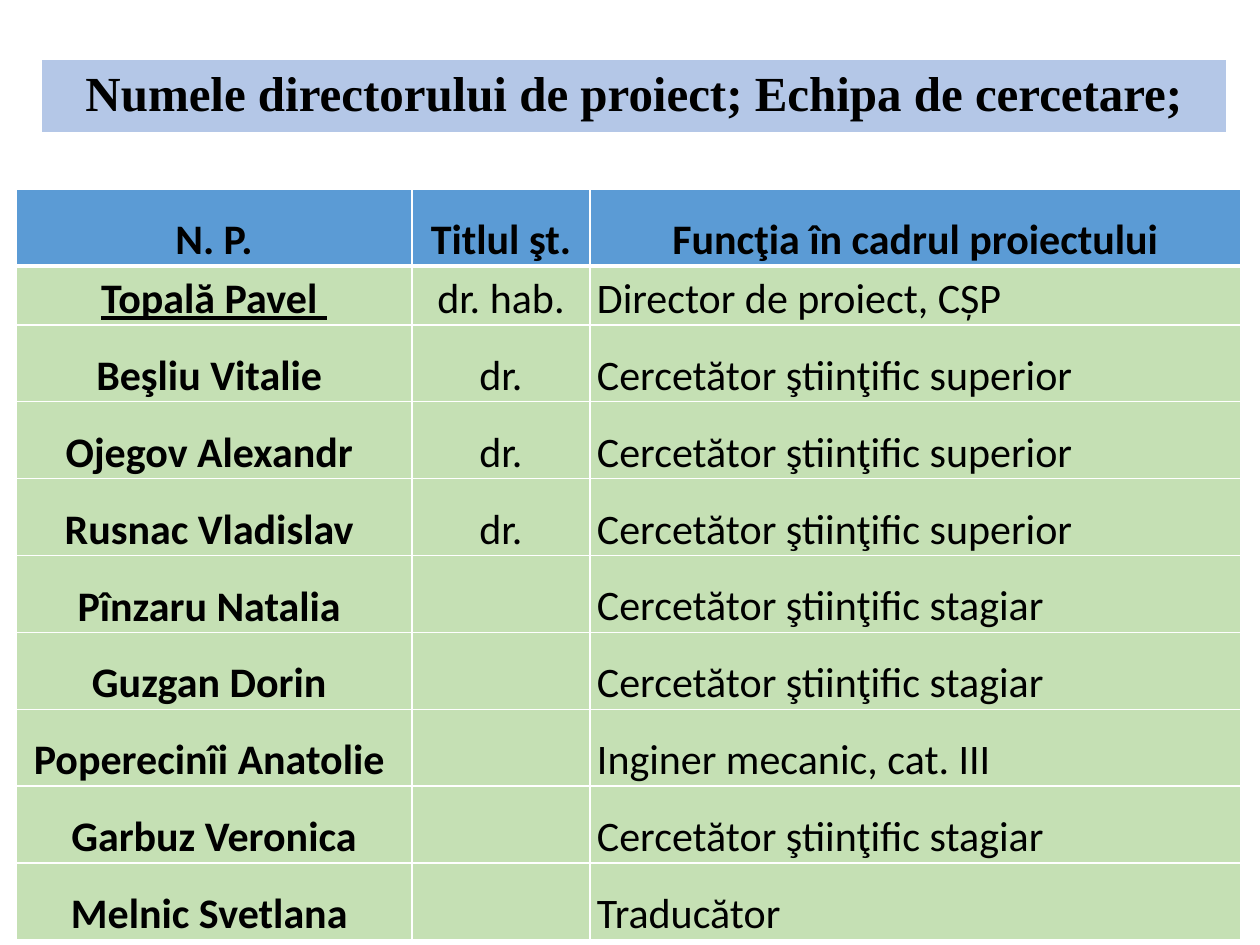
from lxml.etree import SubElement
from pptx import Presentation
from pptx.dml.color import RGBColor
from pptx.enum.text import MSO_ANCHOR as Anchor, PP_ALIGN as Align
from pptx.oxml.ns import qn
from pptx.util import Pt

EMU_PER_PX = 914400 / 126
COLORS = {"banner": "B4C7E7", "header": "5B9BD5", "body": "C5E0B4",
          "grid": "FFFFFF", "text": "000000"}
COLUMN_WIDTHS = (396, 178, 651)
HEADINGS = ("N. P.", "Titlul şt.", "Funcţia în cadrul proiectului")
SENIOR = "Cercetător ştiinţific superior"
TRAINEE = "Cercetător ştiinţific stagiar"
TEAM = (
    ("Topală Pavel ", "dr. hab.", "Director de proiect, CȘP"),
    ("Beşliu Vitalie ", "dr.", SENIOR),
    ("Ojegov Alexandr ", "dr.", SENIOR),
    ("Rusnac Vladislav ", "dr.", SENIOR),
    ("Pînzaru Natalia ", "", TRAINEE),
    ("Guzgan Dorin ", "", TRAINEE),
    ("Poperecinîi Anatolie ", "", "Inginer mecanic, cat. III"),
    ("Garbuz Veronica", "", TRAINEE),
    ("Melnic Svetlana ", "", "Traducător"),
)


def px(length):
    """Turn whole pixels into EMU."""
    return round(length * EMU_PER_PX)


def paint(target, color):
    """Give a shape or cell a solid fill."""
    target.fill.solid()
    target.fill.fore_color.rgb = RGBColor.from_string(COLORS[color])


def write(frame, words, size, face, align, spacing, bold=False, underline=False):
    """Write one formatted run into the first paragraph of a frame."""
    line = frame.paragraphs[0]
    line.alignment = align
    line.line_spacing = spacing
    run = line.add_run()
    run.text = words
    font = run.font
    font.name, font.size, font.bold = face, Pt(size), bold
    font.underline = underline
    font.color.rgb = RGBColor.from_string(COLORS["text"])


def rule_cell(cell, top, bottom):
    """Draw the four grid lines of a cell, with widths in points."""
    props = cell._tc.get_or_add_tcPr()
    for side, width in (("L", 1), ("R", 1), ("T", top), ("B", bottom)):
        edge = SubElement(props, qn(f"a:ln{side}"), w=str(Pt(width)))
        fill = SubElement(edge, qn("a:solidFill"))
        SubElement(fill, qn("a:srgbClr"), val=COLORS["grid"])


def add_banner(slide, left, top, width, height):
    """Place the slide title on its coloured band."""
    banner = slide.shapes.title
    banner.left, banner.top = px(left), px(top)
    banner.width, banner.height = px(width), px(height)
    paint(banner, "banner")
    banner.text_frame.vertical_anchor = Anchor.MIDDLE
    write(banner.text_frame, "Numele directorului de proiect; Echipa de cercetare;",
          28, "Times New Roman", Align.CENTER, 0.9, bold=True)


def fill_cell(cell, words, row, column):
    """Style a team table cell by its row and column."""
    header, director = row == 0, row == 1
    last = row == len(TEAM)
    rule_cell(cell, 3 if director else 1, 3 if header else 1)
    paint(cell, "header" if header else "body")
    cell.margin_left = cell.margin_right = px(7)
    cell.margin_top = cell.margin_bottom = 0
    centred = header or column < 2
    cell.vertical_anchor = Anchor.MIDDLE if centred or last else Anchor.TOP
    if words:
        write(cell.text_frame, words, 24, "Calibri",
              Align.CENTER if centred else Align.LEFT,
              1.15 if director else 1.5,
              bold=header or column == 0,
              underline=director and column == 0)


def add_team_table(slide, left, top, width, height):
    """Place the research team table, with a shorter row for the director."""
    entries = (HEADINGS, *TEAM)
    table = slide.shapes.add_table(len(entries), len(HEADINGS), px(left), px(top),
                                   px(width), px(height)).table
    table.horz_banding = False
    for column, column_width in zip(table.columns, COLUMN_WIDTHS):
        column.width = px(column_width)
    director_height = 53
    row_height = (height - director_height) // len(TEAM)
    for row, entry in enumerate(entries):
        table.rows[row].height = px(director_height if row == 1 else row_height)
        for column, words in enumerate(entry):
            fill_cell(table.cell(row, column), words, row, column)


def main():
    """Build and save the project team slide."""
    deck = Presentation()
    deck.slide_width, deck.slide_height = px(1260), px(945)
    slide = deck.slides.add_slide(deck.slide_layouts.get_by_name("Title Only"))
    add_banner(slide, 42, 60, 1184, 72)
    add_team_table(slide, 16, 189, sum(COLUMN_WIDTHS), 674)
    deck.save("out.pptx")


if __name__ == "__main__":
    main()
